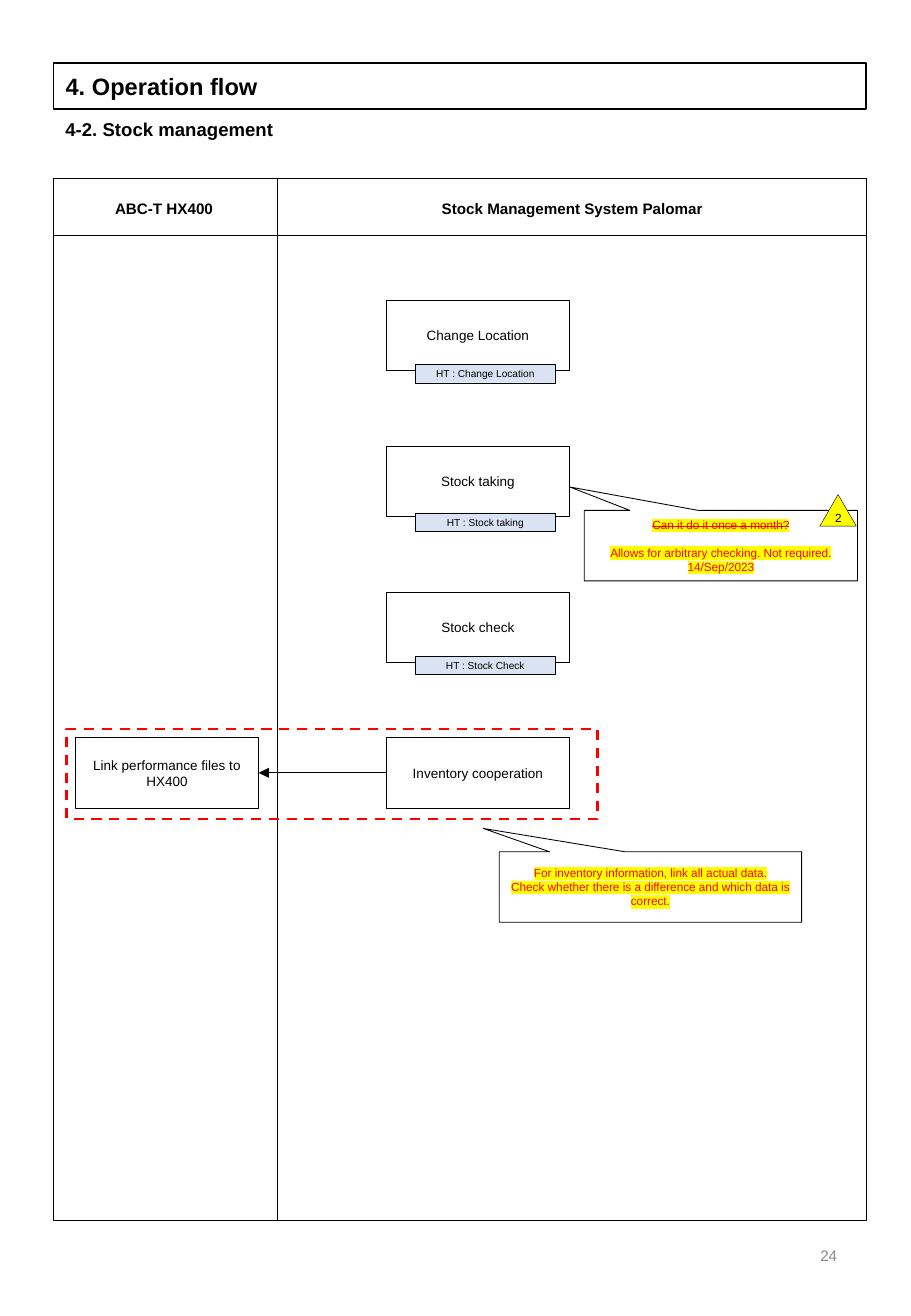
"""Build the stock management operation flow slide."""
import pptx
import pptx.util
import pptx.dml.color
import pptx.enum.dml
import pptx.enum.shapes
import pptx.enum.text
import pptx.oxml
import pptx.oxml.ns

Inches = pptx.util.Inches
Pt = pptx.util.Pt
RGBColor = pptx.dml.color.RGBColor
SHAPE = pptx.enum.shapes.MSO_SHAPE
ALIGN = pptx.enum.text.PP_ALIGN
ANCHOR = pptx.enum.text.MSO_ANCHOR

BLACK = RGBColor(0x00, 0x00, 0x00)
RED = RGBColor(0xFF, 0x00, 0x00)
YELLOW = RGBColor(0xFF, 0xFF, 0x00)
PALE_BLUE = RGBColor(0xDA, 0xE3, 0xF3)
GREY = RGBColor(0x8C, 0x8C, 0x8C)

HEADING = "4. Operation flow"
SUBHEADING = "4-2. Stock management"
PAGE_NUMBER = "24"
LANES = [
    ("ABC-T HX400", 0.43, 1.84),
    ("Stock Management System Palomar", 2.29, 4.84),
]
STEPS = ["Change Location", "Stock taking", "Stock check", "Inventory cooperation"]
HANDY_SCREENS = [
    ("HT : Change Location", 3),
    ("HT : Stock taking", 4.22),
    ("HT : Stock Check", 5.4),
]
LINK_STEP = "Link performance files to HX400"
REMARKS = [
    ((4.11, 7.01, 2.49, 0.58), [
        ("For inventory information, link all actual data.", {}),
        ("Check whether there is a difference and which data is correct.", {}),
    ]),
    ((4.81, 4.2, 2.25, 0.58), [
        ("Can it do it once a month?", {"strike": True}),
        ("Allows for arbitrary checking. Not required.", {"before": 8}),
        ("14/Sep/2023", {}),
    ]),
]
REVISION = "2"

FRAME_LEFT, FRAME_TOP, FRAME_WIDTH, FRAME_HEIGHT = 0.44, 1.47, 6.69, 8.57
HEADER_HEIGHT = 0.47
LANE_EDGE = 2.28
STEP_LEFT, STEP_TOP, STEP_PITCH = 3.18, 2.47, 1.2
STEP_WIDTH, STEP_HEIGHT = 1.51, 0.58
LINK_LEFT = 0.62


def write(frame, text, size=8, color=BLACK, bold=False, align=ALIGN.CENTER,
          anchor=ANCHOR.MIDDLE, highlight=None, strike=False, before=0):
    """Add one formatted paragraph, filling the first one when it is empty."""
    frame.word_wrap = True
    frame.vertical_anchor = anchor
    line = frame.paragraphs[0] if not frame.text else frame.add_paragraph()
    line.alignment = align
    line.space_before = Pt(before)
    run = line.add_run()
    run.text = text
    run.font.size = Pt(size)
    run.font.bold = bold
    run.font.name = "Arial"
    run.font.color.rgb = color
    properties = run.font._element
    if strike:
        properties.set("strike", "sngStrike")
    if highlight is not None:
        marker = pptx.oxml.parse_xml(
            f'<a:highlight {pptx.oxml.ns.nsdecls("a")}>'
            f'<a:srgbClr val="{highlight}"/></a:highlight>')
        properties.find(pptx.oxml.ns.qn("a:solidFill")).addnext(marker)


def add_box(slide, area, kind=SHAPE.RECTANGLE, fill=None, line=BLACK, weight=0.25):
    """Add an outlined preset shape without shadow."""
    box = slide.shapes.add_shape(kind, *map(Inches, area))
    box.shadow.inherit = False
    if fill is None:
        box.fill.background()
    else:
        box.fill.solid()
        box.fill.fore_color.rgb = fill
    box.line.color.rgb = line
    box.line.width = Pt(weight)
    return box


def add_label(slide, area, text, **text_format):
    """Add a text box holding one paragraph."""
    label = slide.shapes.add_textbox(*map(Inches, area))
    write(label.text_frame, text, **text_format)


def add_line(slide, start, end, arrow=False):
    """Add a thin black line, with an arrowhead at its end if asked."""
    link = slide.shapes.add_connector(
        pptx.enum.shapes.MSO_CONNECTOR.STRAIGHT, *map(Inches, start + end))
    link.line.color.rgb = BLACK
    link.line.width = Pt(0.5)
    if arrow:
        link.line._get_or_add_ln().append(pptx.oxml.parse_xml(
            f'<a:tailEnd {pptx.oxml.ns.nsdecls("a")} type="triangle"/>'))
    link._element.spPr.append(pptx.oxml.parse_xml(
        f'<a:effectLst {pptx.oxml.ns.nsdecls("a")}/>'))


def add_heading(slide):
    """Place the framed title, the subheading and the page number."""
    heading = slide.shapes.title
    heading.left, heading.top = Inches(FRAME_LEFT), Inches(0.52)
    heading.width, heading.height = Inches(FRAME_WIDTH), Inches(0.38)
    heading.line.color.rgb = BLACK
    heading.line.width = Pt(1)
    heading.text_frame.auto_size = pptx.enum.text.MSO_AUTO_SIZE.NONE
    write(heading.text_frame, HEADING, size=14, bold=True, align=ALIGN.LEFT)
    add_label(slide, (FRAME_LEFT, 0.92, FRAME_WIDTH, 0.29), SUBHEADING,
              size=11, bold=True, align=ALIGN.LEFT, anchor=ANCHOR.TOP)
    add_label(slide, (5.3, 10.04, 1.69, 0.58), PAGE_NUMBER,
              size=9, color=GREY, align=ALIGN.RIGHT)


def add_lanes(slide):
    """Draw the two swimlanes with their headers."""
    for height in (FRAME_HEIGHT, HEADER_HEIGHT):
        add_box(slide, (FRAME_LEFT, FRAME_TOP, FRAME_WIDTH, height))
    add_line(slide, (LANE_EDGE, FRAME_TOP), (LANE_EDGE, FRAME_TOP + FRAME_HEIGHT))
    for name, left, width in LANES:
        add_label(slide, (left, 1.48, width, HEADER_HEIGHT), name, size=9, bold=True)


def add_flow(slide):
    """Draw the steps, their screens and the file link."""
    tops = [STEP_TOP + STEP_PITCH * row for row in range(len(STEPS))]
    places = [(STEP_LEFT, top, step) for top, step in zip(tops, STEPS)]
    for left, top, step in places + [(LINK_LEFT, tops[-1], LINK_STEP)]:
        box = add_box(slide, (left, top, STEP_WIDTH, STEP_HEIGHT))
        write(box.text_frame, step)
    for screen, top in HANDY_SCREENS:
        tag = add_box(slide, (3.42, top, 1.15, 0.15), fill=PALE_BLUE)
        write(tag.text_frame, screen, size=6)
    link_scope = add_box(slide, (0.55, 6, 4.37, 0.74), line=RED, weight=1.5)
    link_scope.line.dash_style = pptx.enum.dml.MSO_LINE.DASH
    middle = tops[-1] + STEP_HEIGHT / 2
    add_line(slide, (STEP_LEFT, middle), (LINK_LEFT + STEP_WIDTH, middle), arrow=True)


def add_remarks(slide):
    """Draw the review callouts and the revision mark."""
    for area, lines in REMARKS:
        remark = add_box(slide, area, SHAPE.RECTANGULAR_CALLOUT, weight=0.5)
        remark.adjustments[0], remark.adjustments[1] = -0.553, -0.832
        for text, extra in lines:
            write(remark.text_frame, text, size=7, color=RED, highlight=YELLOW, **extra)
    revision = add_box(slide, (6.75, 4.07, 0.3, 0.26), SHAPE.ISOSCELES_TRIANGLE, YELLOW)
    write(revision.text_frame, REVISION, size=7)


def main():
    """Assemble and save the slide."""
    deck = pptx.Presentation()
    deck.slide_width, deck.slide_height = Inches(7.5), Inches(10.83)
    slide = deck.slides.add_slide(deck.slide_layouts[5])
    add_heading(slide)
    add_lanes(slide)
    add_flow(slide)
    add_remarks(slide)
    deck.save("out.pptx")


if __name__ == "__main__":
    main()
